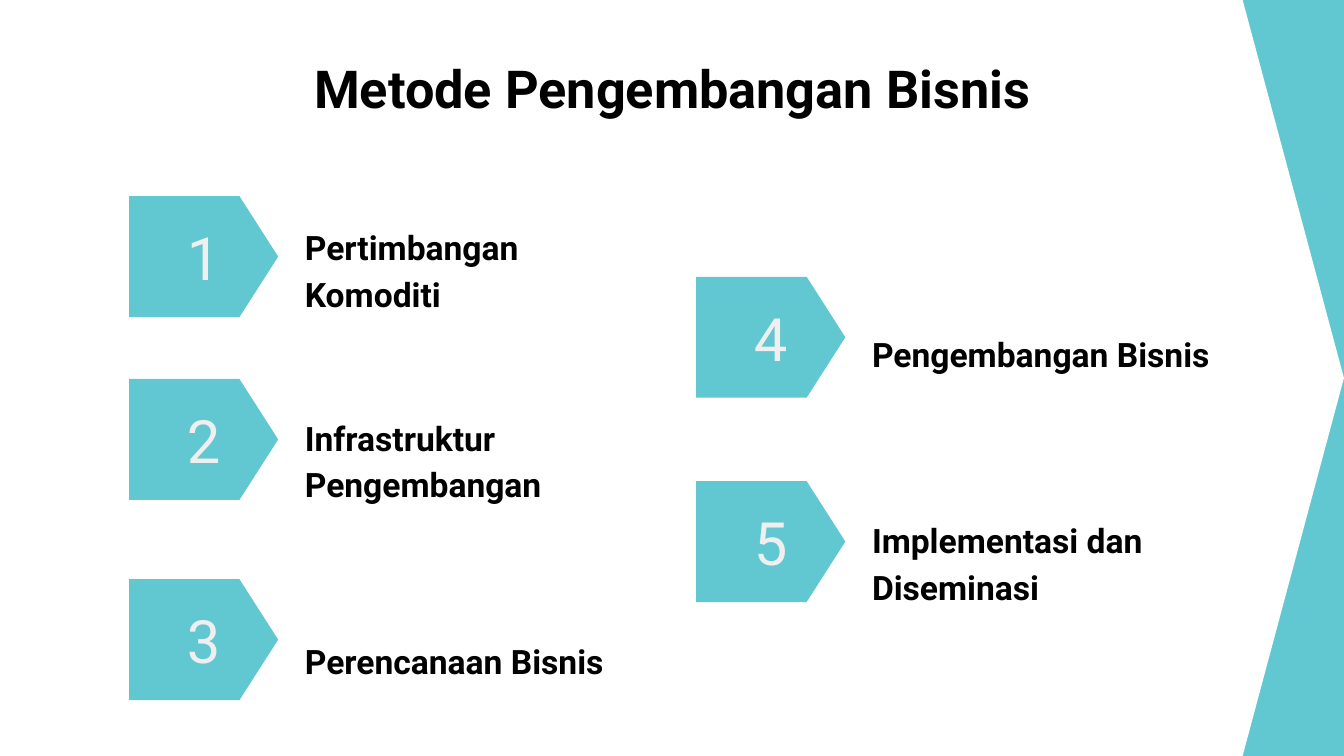
"""Build the five-step business development method slide."""
from pptx import Presentation
from pptx.dml.color import RGBColor
from pptx.enum.shapes import MSO_SHAPE
from pptx.enum.text import MSO_ANCHOR, PP_ALIGN
from pptx.util import Inches, Pt

PENTAGON = MSO_SHAPE.PENTAGON
TOP, MIDDLE = MSO_ANCHOR.TOP, MSO_ANCHOR.MIDDLE
LEFT, CENTER = PP_ALIGN.LEFT, PP_ALIGN.CENTER

TITLE = "Metode Pengembangan Bisnis"
# column, arrow top, label top, label width, label
STEPS = [
    (0, 1.46, 1.79, 2.6, "Pertimbangan Komoditi"),
    (0, 2.82, 3.21, 2.6, "Infrastruktur Pengembangan"),
    (0, 4.31, 4.7, 2.6, "Perencanaan Bisnis"),
    (1, 2.06, 2.41, 2.84, "Pengembangan Bisnis"),
    (1, 3.58, 3.97, 2.6, "Implementasi dan Diseminasi"),
]
COLORS = {"teal": "61C7D0", "white": "FFFFFF", "text": "000000", "number": "EFEFEF"}
W, H = 10, 5.625
COLUMN_X, COLUMN_GAP = 0.96, 4.22
ARROW_W, ARROW_H = 1.11, 0.9
NUMBER_SIZE, NUMBER_DX = 0.63, 0.24
LABEL_DX, LABEL_H = 1.21, 0.4
STYLES = {
    "title": {"font": {"size": Pt(28), "bold": True}, "color": "text", "anchor": TOP,
              "para": {"alignment": CENTER}},
    "number": {"font": {"size": Pt(32), "bold": False}, "color": "number", "anchor": MIDDLE,
               "para": {"alignment": CENTER}},
    "label": {"font": {"size": Pt(18), "bold": True}, "color": "text", "anchor": MIDDLE,
              "para": {"alignment": LEFT, "line_spacing": 1.15, "space_after": Pt(16)}},
}


def rgb(name):
    """Return a named colour."""
    return RGBColor.from_string(COLORS[name])


def set_all(target, values):
    """Set each attribute of target from a dict."""
    for name, value in values.items():
        setattr(target, name, value)


def add_pentagon(s, box, point, color):
    """Add a flat pentagon arrow."""
    sp = s.shapes.add_shape(PENTAGON, *map(Inches, box))
    sp.adjustments[0] = point
    sp.shadow.inherit = False
    sp.fill.solid()
    sp.fill.fore_color.rgb = rgb(color)
    sp.line.fill.background()


def add_text(s, box, text, style):
    """Add a text box in a named style."""
    look = STYLES[style]
    tf = s.shapes.add_textbox(*map(Inches, box)).text_frame
    margins = dict.fromkeys(("margin_left", "margin_top", "margin_right", "margin_bottom"), Inches(0.1))
    set_all(tf, {"word_wrap": True, "vertical_anchor": look["anchor"], **margins})
    p = tf.paragraphs[0]
    set_all(p, look["para"])
    r = p.add_run()
    r.text = text
    set_all(r.font, {"name": "Roboto", **look["font"]})
    r.font.color.rgb = rgb(look["color"])


def main():
    """Build and save the slide."""
    prs = Presentation()
    prs.slide_width, prs.slide_height = Inches(W), Inches(H)
    s = prs.slides.add_slide(prs.slide_layouts[6])
    s.background.fill.solid()
    s.background.fill.fore_color.rgb = rgb("teal")

    add_pentagon(s, (0, 0, W, H), 0.134, "white")
    add_text(s, (0.78, 0.32, W - 2 * 0.78, 0.63), TITLE, "title")
    for number, (column, top, label_top, label_w, label) in enumerate(STEPS, 1):
        x = COLUMN_X + column * COLUMN_GAP
        number_top = top + (ARROW_H - NUMBER_SIZE) / 2
        add_pentagon(s, (x, top, ARROW_W, ARROW_H), 0.32, "teal")
        add_text(s, (x + NUMBER_DX, number_top, NUMBER_SIZE, NUMBER_SIZE), str(number), "number")
        add_text(s, (x + LABEL_DX, label_top, label_w, LABEL_H), label, "label")
    prs.save("out.pptx")


if __name__ == "__main__":
    main()
